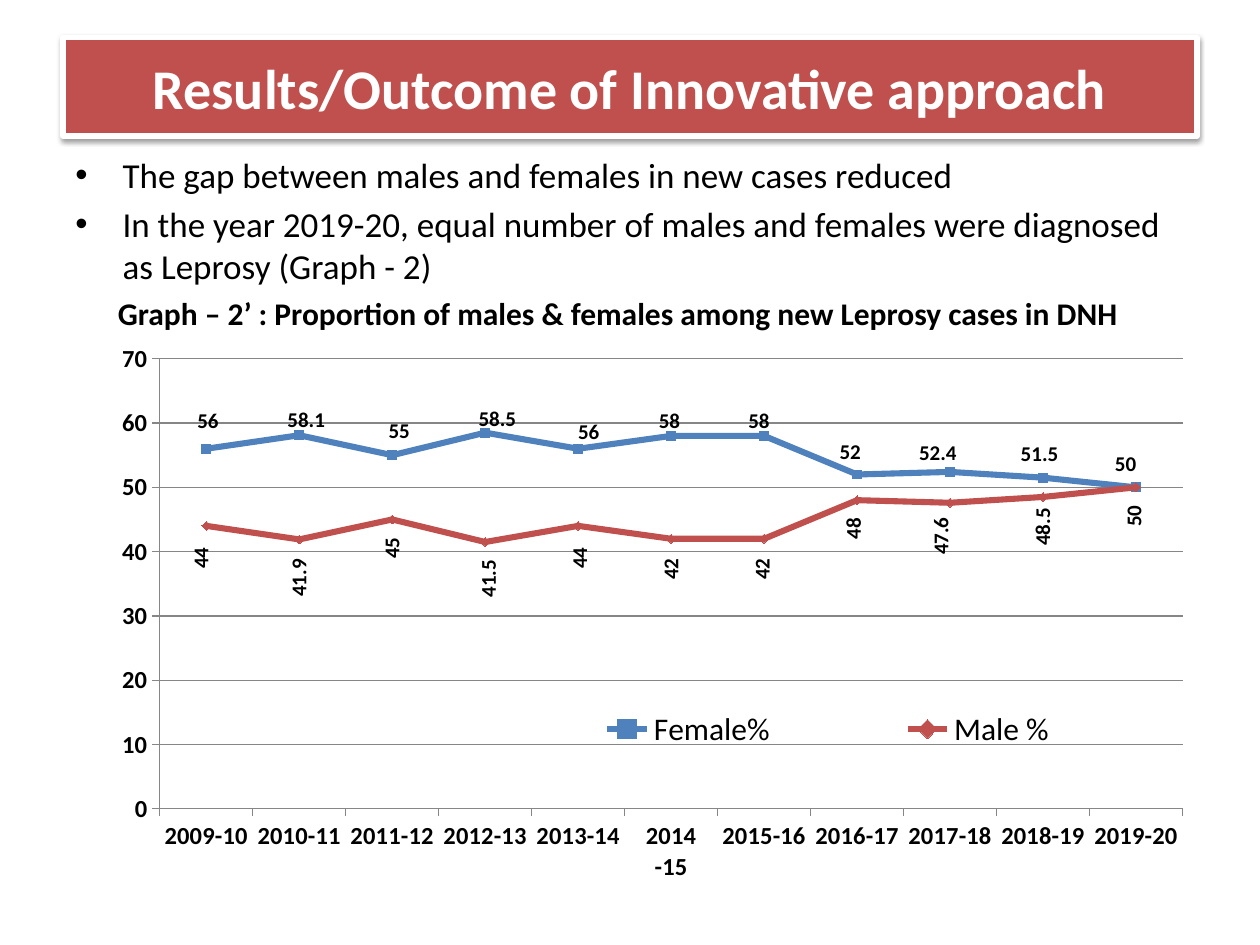
"""Build the slide on the share of males and females among new Leprosy cases."""
import dataclasses

import lxml.etree
import pptx
import pptx.chart.data
import pptx.dml.color
import pptx.enum.chart
import pptx.enum.shapes
import pptx.enum.text
import pptx.oxml.ns
import pptx.util

Pt = pptx.util.Pt
qn = pptx.oxml.ns.qn
CH = pptx.enum.chart


@dataclasses.dataclass(frozen=True)
class Theme:
    """Colours and type sizes of the slide."""
    font: str = "Calibri"
    red: str = "C0504D"
    blue: str = "4F81BD"
    white: str = "FFFFFF"
    black: str = "000000"
    grey: str = "868686"
    title: int = 32
    body: int = 20
    caption: int = 18
    axis: int = 14
    label: int = 12


def rgb(value):
    """Turn a hex string into a colour."""
    return pptx.dml.color.RGBColor.from_string(value)


def sub(parent, tag, **attrs):
    """Append a namespaced child element."""
    return lxml.etree.SubElement(parent, qn(tag), attrs)


def set_layout(parent, index, **values):
    """Give a chart part a manual layout."""
    for old in parent.findall(qn("c:layout")):
        parent.remove(old)
    layout = lxml.etree.Element(qn("c:layout"))
    manual = sub(layout, "c:manualLayout")
    for name, value in values.items():
        sub(manual, f"c:{name}", val=str(value))
    parent.insert(index, layout)


class Deck:
    """Hold the theme and the current slide."""

    def __init__(self, prs, theme):
        """Add a blank slide."""
        self.theme = theme
        self.s = prs.slides.add_slide(prs.slide_layouts[6])

    def style(self, font, size, color, bold=False):
        """Set the face, size, colour and weight of a font."""
        font.name, font.size, font.bold = self.theme.font, Pt(size), bold
        font.color.rgb = rgb(color)

    def run(self, p, text, size, color, bold=False):
        """Add one styled run."""
        r = p.add_run()
        r.text = text
        self.style(r.font, size, color, bold)

    def banner(self, text, box):
        """Add the title bar with its soft shadow."""
        t = self.theme
        sp = self.s.shapes.add_shape(pptx.enum.shapes.MSO_SHAPE.RECTANGLE, *map(Pt, box))
        sp.fill.solid()
        sp.fill.fore_color.rgb = rgb(t.red)
        sp.line.color.rgb = rgb(t.white)
        sp.line.width = Pt(3)
        sp.shadow.inherit = False
        effects = sp.element.spPr.find(qn("a:effectLst"))
        shadow = sub(effects, "a:outerShdw", blurRad=str(Pt(3.1)), dist=str(Pt(1.6)),
                     dir="5400000", rotWithShape="0")
        sub(sub(shadow, "a:srgbClr", val=t.black), "a:alpha", val="38000")
        tf = sp.text_frame
        tf.word_wrap = True
        tf.vertical_anchor = pptx.enum.text.MSO_ANCHOR.MIDDLE
        p = tf.paragraphs[0]
        p.alignment = pptx.enum.text.PP_ALIGN.CENTER
        self.run(p, text, t.title, t.white, True)

    def body(self, bullets, caption, box):
        """Add the bullets and the caption of the graph."""
        t = self.theme
        tf = self.s.shapes.add_textbox(*map(Pt, box)).text_frame
        tf.word_wrap = True
        for i, text in enumerate([*bullets, caption]):
            p = tf.add_paragraph() if i else tf.paragraphs[0]
            p.space_before = Pt(4)
            pPr = p._p.get_or_add_pPr()
            if i < len(bullets):
                pPr.set("marL", str(Pt(27)))
                pPr.set("indent", str(Pt(-27)))
                sub(pPr, "a:buFont", typeface="Arial")
                sub(pPr, "a:buChar", char="•")
                self.run(p, text, t.body, t.black)
            else:
                pPr.set("marL", str(Pt(24.3)))
                self.run(p, text, t.caption, t.black, True)

    def axis(self, axis):
        """Style one axis."""
        axis.major_tick_mark = CH.XL_TICK_MARK.OUTSIDE
        axis.minor_tick_mark = CH.XL_TICK_MARK.NONE
        axis.format.line.color.rgb = rgb(self.theme.grey)
        self.style(axis.tick_labels.font, self.theme.axis, self.theme.black, True)

    def line_chart(self, cats, series, box):
        """Add the line chart with labels, axes and legend."""
        t = self.theme
        data = pptx.chart.data.CategoryChartData()
        data.categories = cats
        for item in series:
            data.add_series(item["name"], item["values"])
        chart = self.s.shapes.add_chart(
            CH.XL_CHART_TYPE.LINE_MARKERS, *map(Pt, box), data).chart
        chart.has_title = False
        self.style(chart.font, t.caption, t.black)
        self.axis(chart.category_axis)
        val = chart.value_axis
        self.axis(val)
        val.minimum_scale, val.maximum_scale, val.major_unit = 0, 70, 10
        val.has_major_gridlines = True
        val.major_gridlines.format.line.color.rgb = rgb(t.grey)
        chart.plots[0].vary_by_categories = False
        for ser, item in zip(chart.plots[0].series, series):
            self.line(ser, item, box)
        chart.has_legend = True
        chart.legend.position = CH.XL_LEGEND_POSITION.RIGHT
        chart.legend.include_in_layout = False
        self.style(chart.legend.font, t.caption, t.black)
        root = chart.element
        set_layout(root.xpath(".//c:plotArea")[0], 0, layoutTarget="inner", xMode="edge",
                   yMode="edge", x=0.041, y=0.041, w=0.955, h=0.825)
        set_layout(root.xpath(".//c:legend")[0], 1, xMode="edge", yMode="edge",
                   x=0.34, y=0.67, w=0.65, h=0.1)

    def line(self, ser, item, box):
        """Style one series and label its points without leader lines."""
        t = self.theme
        color = rgb(item["color"])
        ser.smooth = False
        ser.format.line.color.rgb = color
        ser.format.line.width = Pt(3.5)
        ser.marker.style, ser.marker.size = item["marker"], 5
        ser.marker.format.fill.solid()
        ser.marker.format.fill.fore_color.rgb = color
        ser.marker.format.line.color.rgb = color
        for i in range(len(item["values"])):
            label = ser.points[i].data_label
            self.style(label.font, t.label, t.black, True)
            label.position = item["position"]
        dLbls = ser._element.find(qn("c:dLbls"))
        for leader in dLbls.findall(qn("c:showLeaderLines")):
            dLbls.remove(leader)
        sub(dLbls, "c:showLeaderLines", val="0")
        for dLbl, (dx, dy) in zip(dLbls.findall(qn("c:dLbl")), item["shifts"]):
            body = dLbl.find(qn("c:txPr")).find(qn("a:bodyPr"))
            body.set("rot", str(item["turn"] * 60000))
            body.set("vert", "horz")
            set_layout(dLbl, 1, x=round(dx / box[2], 4), y=round(dy / box[3], 4))


def main():
    """Build and save the slide."""
    prs = pptx.Presentation()
    prs.slide_width, prs.slide_height = Pt(720), Pt(540)
    theme = Theme()
    deck = Deck(prs, theme)
    deck.body(["The gap between males and females in new cases reduced",
               "In the year 2019-20, equal number of males and females were diagnosed "
               "as Leprosy (Graph - 2)"],
              "Graph – 2’ : Proportion of males & females among new Leprosy cases in DNH",
              (36, 84.24, 648, 398))
    deck.banner("Results/Outcome of Innovative approach", (36, 21.6, 648, 56.2))
    cats = ["2009-10", "2010-11", "2011-12", "2012-13", "2013-14", "2014 -15",
            "2015-16", "2016-17", "2017-18", "2018-19", "2019-20"]
    female = dict(name="Female%", color=theme.blue, marker=CH.XL_MARKER_STYLE.SQUARE,
                  values=[56, 58.1, 55, 58.5, 56, 58, 58, 52, 52.4, 51.5, 50],
                  position=CH.XL_LABEL_POSITION.ABOVE, turn=0,
                  shifts=[(1, -3), (4, 4), (4, -1), (7, 5), (6, 3), (-1, 4), (-3, 4),
                          (-4, 0), (-7, 2), (-2, -1), (-6, -1)])
    male = dict(name="Male %", color=theme.red, marker=CH.XL_MARKER_STYLE.DIAMOND,
                values=[44, 41.9, 45, 41.5, 44, 42, 42, 48, 47.6, 48.5, 50],
                position=CH.XL_LABEL_POSITION.BELOW, turn=-90,
                shifts=[(-3, 7), (0, 6), (0, 5), (2, 5), (1, 7), (0, 6), (-1, 6),
                        (-2, 5), (-5, 3), (0, 1), (-1, 5)])
    deck.line_chart(cats, [female, male], (66.24, 192.24, 612, 311.76))
    prs.save("out.pptx")


if __name__ == "__main__":
    main()
